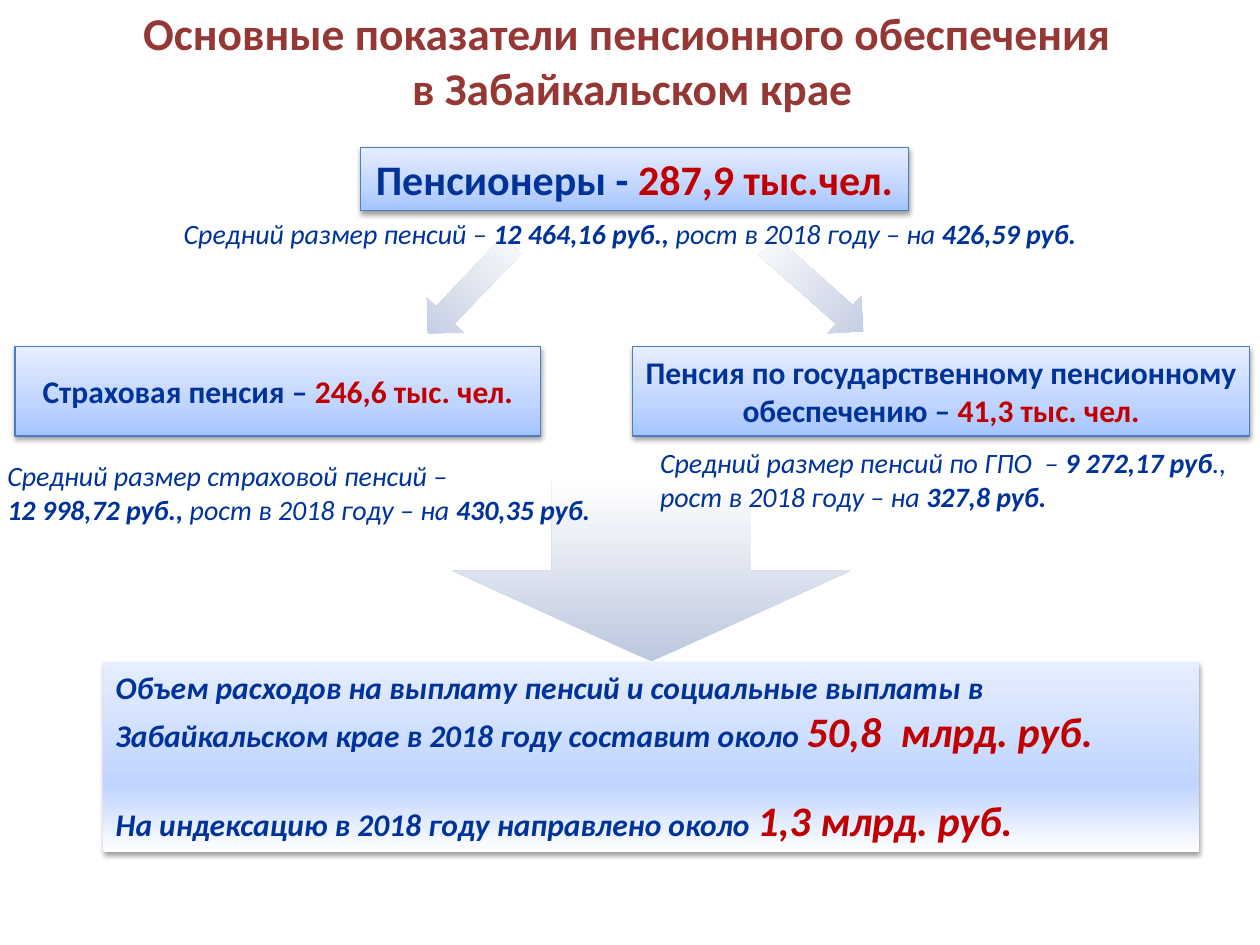
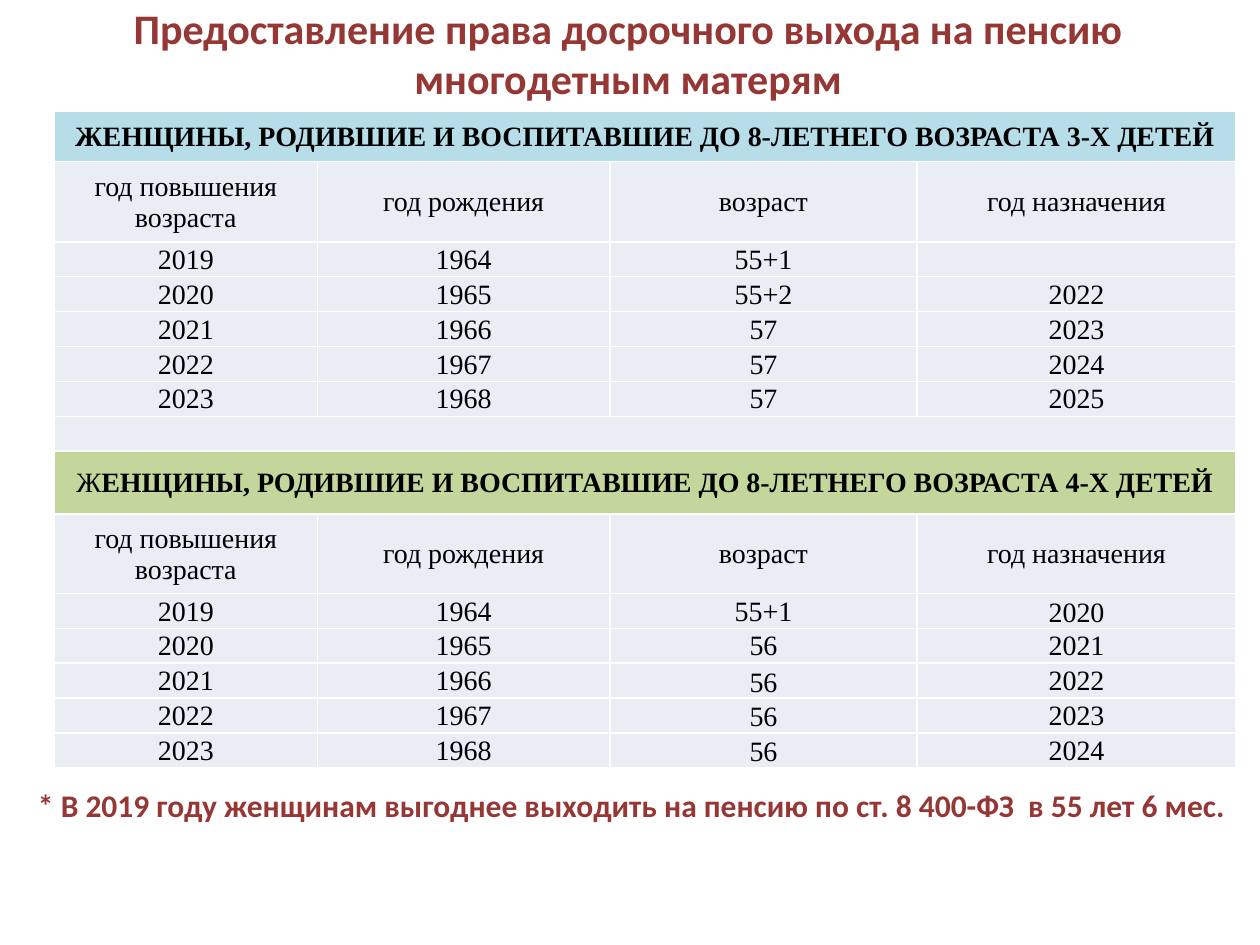
from lxml import etree
from pptx import Presentation
from pptx import util as u
from pptx.dml.color import RGBColor
from pptx.enum import shapes, text
from pptx.oxml import parse_xml
from pptx.oxml.ns import qn

NS = 'xmlns:a="http://schemas.openxmlformats.org/drawingml/2006/main"'
NAVY, RED, WINE, EDGE = "003399", "C00000", "953735", "4B7EBC"
SKY, PALE = "B7DEE8", "E9EDF4"
LEAF = "C3D69B"
PANEL = [(0, "A4C4FF"), (35, "BFD4FF"), (100, "E6EEFF")]
FADE = [(0, "FFFFFF"), *PANEL[1:]]
ARROW = [(0, "BCC8DF"), (100, "FFFFFF")]
HEAD = {"name": "Calibri", "bold": True, "color": WINE}
LABEL = {"name": "Calibri", "bold": True, "color": NAVY, "size": 18}
NOTE = {"name": "Calibri", "italic": True, "bold": False, "color": NAVY, "size": 16}
CELL = {"name": "Times New Roman", "bold": False, "color": "000000", "size": 16}
BOLD = {"bold": True}
HOT = {"color": RED}
BIG = {"color": RED, "size": 24}
LEFT, MID = text.PP_ALIGN.LEFT, text.PP_ALIGN.CENTER
TOP, CORE, LOW = (text.MSO_ANCHOR.TOP, text.MSO_ANCHOR.MIDDLE,
                  text.MSO_ANCHOR.BOTTOM)


def tint(code):
    return RGBColor.from_string(code)


def inch(box):
    return [u.Inches(v) for v in box]


def write(frame, paras, base, align=LEFT, gap=0):
    for n, runs in enumerate(paras):
        para = frame.paragraphs[0] if n == 0 else frame.add_paragraph()
        para.alignment = align
        if n and gap:
            para.space_before = u.Pt(gap)
        for words, extra in runs:
            run = para.add_run()
            run.text = words
            for key, val in {**base, **extra}.items():
                if key == "color":
                    run.font.color.rgb = tint(val)
                else:
                    setattr(run.font, key, u.Pt(val) if key == "size" else val)


def label(slide, box, paras, base, align=LEFT):
    frame = slide.shapes.add_textbox(*inch(box)).text_frame
    frame.word_wrap = True
    write(frame, paras, base, align)


def title(slide, box, lines, size):
    label(slide, box, [[(line, {"size": size})] for line in lines], HEAD, MID)


def blend(shape, stops):
    marks = "".join(f'<a:gs pos="{at * 1000}"><a:srgbClr val="{code}"/></a:gs>'
                    for at, code in stops)
    shape.fill.background()
    old = shape._element.spPr.find(qn("a:noFill"))
    old.getparent().replace(old, parse_xml(
        f'<a:gradFill {NS} rotWithShape="1"><a:gsLst>{marks}</a:gsLst>'
        '<a:lin ang="16200000" scaled="0"/></a:gradFill>'))


def shade(shape):
    shape.shadow.inherit = False
    shape._element.spPr.find(qn("a:effectLst")).append(parse_xml(
        f'<a:outerShdw {NS} blurRad="40000" dist="20000" dir="5400000" '
        'rotWithShape="0"><a:srgbClr val="000000"><a:alpha val="38000"/>'
        '</a:srgbClr></a:outerShdw>'))


def arrow(slide, box, turn=0):
    shape = slide.shapes.add_shape(shapes.MSO_SHAPE.DOWN_ARROW, *inch(box))
    shape.rotation = turn
    shape.shadow.inherit = False
    shape.line.fill.background()
    blend(shape, ARROW)


def panel(slide, box, paras, stops=PANEL, edge=EDGE, base=LABEL,
          align=MID, anchor=CORE, wrap=True, gap=0):
    shape = slide.shapes.add_shape(shapes.MSO_SHAPE.RECTANGLE, *inch(box))
    if edge:
        shape.line.color.rgb = tint(edge)
        shape.line.width = u.Pt(0.75)
    else:
        shape.line.fill.background()
    blend(shape, stops)
    shade(shape)
    frame = shape.text_frame
    frame.word_wrap = wrap
    frame.vertical_anchor = anchor
    write(frame, paras, base, align, gap)


def rim(cell):
    props = cell._tc.get_or_add_tcPr()
    for side in "LRTB":
        props.append(parse_xml(
            f'<a:ln{side} {NS} w="12700"><a:solidFill><a:srgbClr val="FFFFFF"/>'
            f'</a:solidFill></a:ln{side}>'))


def fill(cell, runs, back, anchor):
    for side, val in {"left": 0.01, "right": 0.01, "top": 0.01, "bottom": 0}.items():
        setattr(cell, f"margin_{side}", u.Inches(val))
    cell.vertical_anchor = anchor
    rim(cell)
    cell.fill.solid()
    cell.fill.fore_color.rgb = tint(back)
    write(cell.text_frame, [runs], CELL, MID)
    if not runs:
        end = etree.SubElement(cell.text_frame.paragraphs[0]._p, qn("a:endParaRPr"))
        end.set("sz", "1600")


def grid(slide, box, rows, wides, talls, bands, lows):
    table = slide.shapes.add_table(len(rows), len(wides), *inch(box)).table
    table.first_row = table.horz_banding = False
    for col, wide in zip(table.columns, wides):
        col.width = u.Inches(wide)
    rest = (box[3] - sum(talls.values())) / (len(rows) - len(talls))
    for r, row in enumerate(rows):
        table.rows[r].height = u.Inches(talls.get(r, rest))
        for c in range(len(wides)):
            runs = row[c] if c < len(row) else []
            if isinstance(runs, str):
                runs = [(runs, {})] if runs else []
            fill(table.cell(r, c), runs, bands.get(r, PALE),
                 LOW if (r, c) in lows else CORE)
        if len(row) == 1:
            table.cell(r, 0).merge(table.cell(r, len(wides) - 1))


def figures(slide):
    arrow(slide, (3.59, 3.81, 3.16, 1.44))
    arrow(slide, (3.53, 1.81, 0.4, 0.97), 43.6)
    arrow(slide, (6.27, 1.78, 0.4, 1.02), 311.7)
    title(slide, (0, -0.01, 10.04, 0.98),
          ["Основные показатели пенсионного обеспечения ", "в Забайкальском крае"], 26)
    panel(slide, (0.12, 2.75, 4.17, 0.71),
          [[("Страховая пенсия – ", {}), ("246,6 тыс. чел.", HOT)]])
    panel(slide, (5.02, 2.75, 4.9, 0.71),
          [[("Пенсия по государственному пенсионному обеспечению – ", {}),
            ("41,3 тыс. чел.", HOT)]])
    panel(slide, (2.86, 1.17, 4.35, 0.5),
          [[("Пенсионеры - ", {"size": 24}), ("287,9 тыс.чел.", BIG)]], wrap=False)
    label(slide, (0, 1.67, 10, 0.37),
          [[("Средний размер пенсий – ", {}), ("12 464,16 руб., ", BOLD),
            ("рост в 2018 году – на ", {}), ("426,59 руб.", BOLD)]], NOTE, MID)
    label(slide, (-0.04, 3.59, 5.18, 0.64),
          [[("Средний размер страховой пенсий –", {})],
           [("12 998,72 руб., ", BOLD), ("рост в 2018 году – на ", {}),
            ("430,35 руб.", BOLD)]], NOTE)
    label(slide, (5.14, 3.49, 4.9, 0.64),
          [[("Средний размер пенсий по ГПО  – ", {}), ("9 272,17 руб", BOLD),
            ("., рост в 2018 году – на ", {}), ("327,8 руб.", BOLD)]], NOTE)
    panel(slide, (0.82, 5.25, 8.7, 1.51),
          [[("Объем расходов на выплату пенсий и социальные выплаты в "
             "Забайкальском крае в 2018 году составит около ", {}),
            ("50,8  млрд. руб.", BIG)],
           [("На индексацию в 2018 году направлено около ", {}),
            ("1,3 млрд. руб.", BIG)]],
          FADE, None, {**LABEL, "italic": True}, LEFT, TOP, gap=22)


def mothers(slide):
    title(slide, (-0.03, -0.03, 10.03, 0.91),
          ["Предоставление права досрочного выхода на пенсию многодетным матерям"], 24)
    names = ["год повышения возраста", "год рождения", "возраст", "год назначения"]
    lead = "ЕНЩИНЫ, РОДИВШИЕ И ВОСПИТАВШИЕ ДО 8-ЛЕТНЕГО ВОЗРАСТА {}-Х ДЕТЕЙ"

    def years(ages, dates):
        return [[str(2019 + n), str(1964 + n), age, date]
                for n, (age, date) in enumerate(zip(ages, dates))]

    rows = [[[("Ж" + lead.format(3), BOLD)]], names,
            *years(["55+1", "55+2", "57", "57", "57"],
                   ["", "2022", "2023", "2024", "2025"]),
            [""],
            [[("Ж", {}), (lead.format(4), BOLD)]], names,
            *years(["55+1"] + ["56"] * 4,
                   ["2020", "2021", "2022", "2023", "2024"])]
    grid(slide, (0.43, 0.88, 9.37, 5.2), rows, [2.09, 2.32, 2.44, 2.53],
         {0: 0.4, 1: 0.64, 8: 0.5, 9: 0.63}, {0: SKY, 8: LEAF},
         {(10, 3), (12, 2), (13, 2), (14, 2)})
    title(slide, (0, 6.19, 10.03, 0.4),
          ["* В 2019 году женщинам выгоднее выходить на пенсию по ст. 8 400-ФЗ  "
           "в 55 лет 6 мес."], 18)


def main():
    deck = Presentation()
    deck.slide_width, deck.slide_height = u.Inches(10), u.Inches(7.5)
    for build in (figures, mothers):
        build(deck.slides.add_slide(deck.slide_layouts[6]))
    deck.save("out.pptx")


if __name__ == "__main__":
    main()
